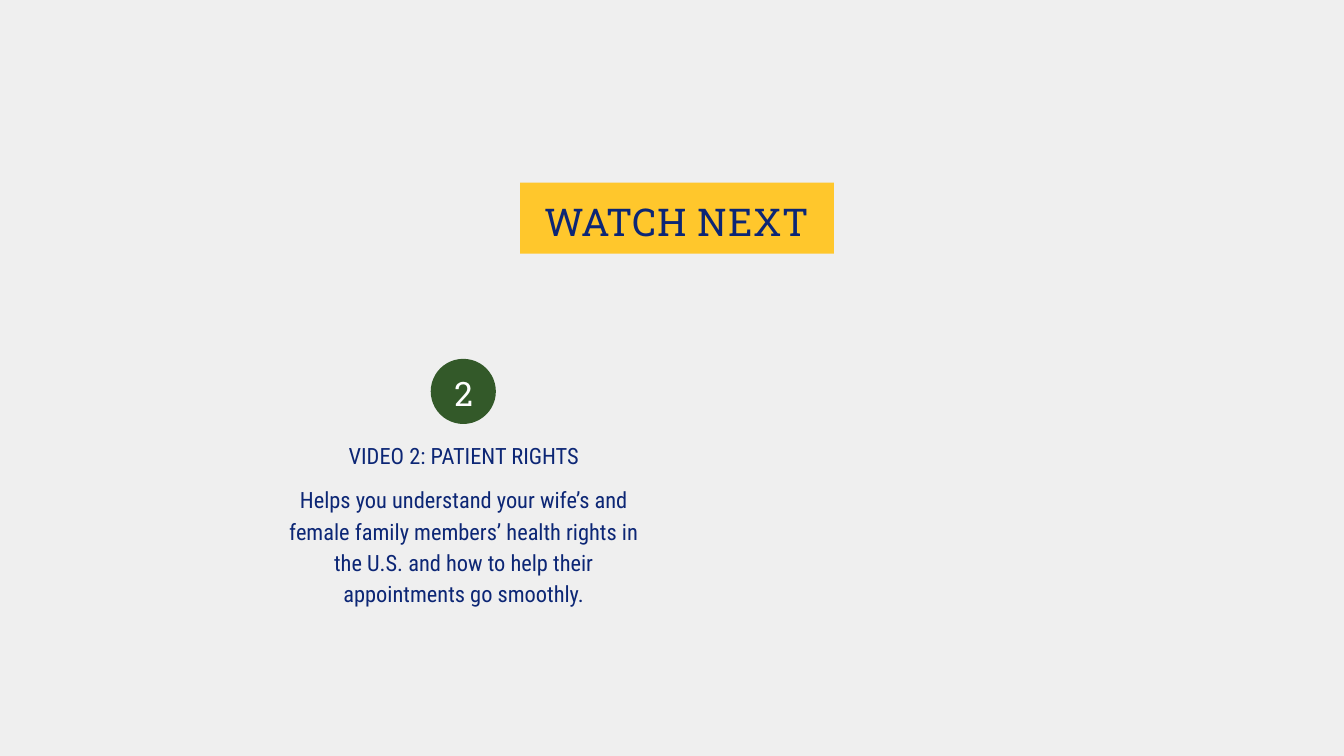
from typing import NamedTuple

from pptx import Presentation
from pptx.dml.color import RGBColor
from pptx.enum.shapes import MSO_SHAPE
from pptx.enum.text import MSO_ANCHOR, MSO_AUTO_SIZE, PP_ALIGN
from pptx.shapes.autoshape import Shape
from pptx.slide import Slide
from pptx.util import Pt

COLORS = {
    "background": "EFEFEF",
    "navy": "0C2675",
    "gold": "FFC72C",
    "green": "335929",
    "white": "FFFFFF",
}
HEADING_FONT = "Roboto Slab"
BODY_FONT = "Roboto Condensed"
LINE_RATIO = 1.4


class Frame(NamedTuple):
    left: float
    top: float
    width: float
    height: float

    def lengths(self) -> list[Pt]:
        return [Pt(value) for value in self]


class Label(NamedTuple):
    text: str
    frame: Frame
    size: float
    font: str
    color: str = "navy"


BANNER = Frame(557.3, 195.8, 336.2, 76)
BADGE = Frame(461.5, 384.5, 69.8, 69.8)
TITLE = Label("WATCH NEXT", Frame(557.3, 203.8, 336.2, 54.7), 41, HEADING_FONT)
LABELS = [
    Label("2", Frame(484.6, 392.4, 24.5, 47.5), 36, HEADING_FONT, "white"),
    Label("VIDEO 2: PATIENT RIGHTS", Frame(304.6, 469.4, 384.5, 31.7), 24, BODY_FONT),
    Label(
        "Helps you understand your wife’s and female family members’ health rights "
        "in the U.S. and how to help their appointments go smoothly.",
        Frame(304.6, 516.2, 384.5, 130.3), 24, BODY_FONT,
    ),
]


def rgb(name: str) -> RGBColor:
    return RGBColor.from_string(COLORS[name])


def add_panel(page: Slide, kind: MSO_SHAPE, frame: Frame, color: str) -> Shape:
    panel = page.shapes.add_shape(kind, *frame.lengths())
    panel.shadow.inherit = False
    panel.fill.solid()
    panel.fill.fore_color.rgb = rgb(color)
    panel.line.fill.background()
    return panel


def write_label(box: Shape, label: Label) -> None:
    """Place the box and fill it with centred text without insets."""
    box.left, box.top, box.width, box.height = label.frame.lengths()
    frame = box.text_frame
    frame.text = label.text
    frame.word_wrap = True
    frame.auto_size = MSO_AUTO_SIZE.SHAPE_TO_FIT_TEXT
    frame.vertical_anchor = MSO_ANCHOR.TOP
    frame.margin_left = frame.margin_right = Pt(0)
    frame.margin_top = frame.margin_bottom = Pt(0)
    para = frame.paragraphs[0]
    para.alignment = PP_ALIGN.CENTER
    para.line_spacing = Pt(label.size * LINE_RATIO)
    para.space_before = Pt(0)
    font = para.runs[0].font
    font.size = Pt(label.size)
    font.name = label.font
    font.color.rgb = rgb(label.color)


def main() -> None:
    deck = Presentation()
    deck.slide_width, deck.slide_height = Pt(1440), Pt(810)
    page = deck.slides.add_slide(deck.slide_layouts.get_by_name("Title Only"))
    page.background.fill.solid()
    page.background.fill.fore_color.rgb = rgb("background")

    banner = add_panel(page, MSO_SHAPE.RECTANGLE, BANNER, "gold")
    title = page.shapes.title
    write_label(title, TITLE)
    span = title.text_frame.paragraphs[0].runs[0]
    span.font._element.set("spc", "80")
    banner.element.addnext(title.element)  # the title sits in front of its banner

    add_panel(page, MSO_SHAPE.OVAL, BADGE, "green")
    for label in LABELS:
        write_label(page.shapes.add_textbox(*label.frame.lengths()), label)

    deck.save("out.pptx")


if __name__ == "__main__":
    main()
